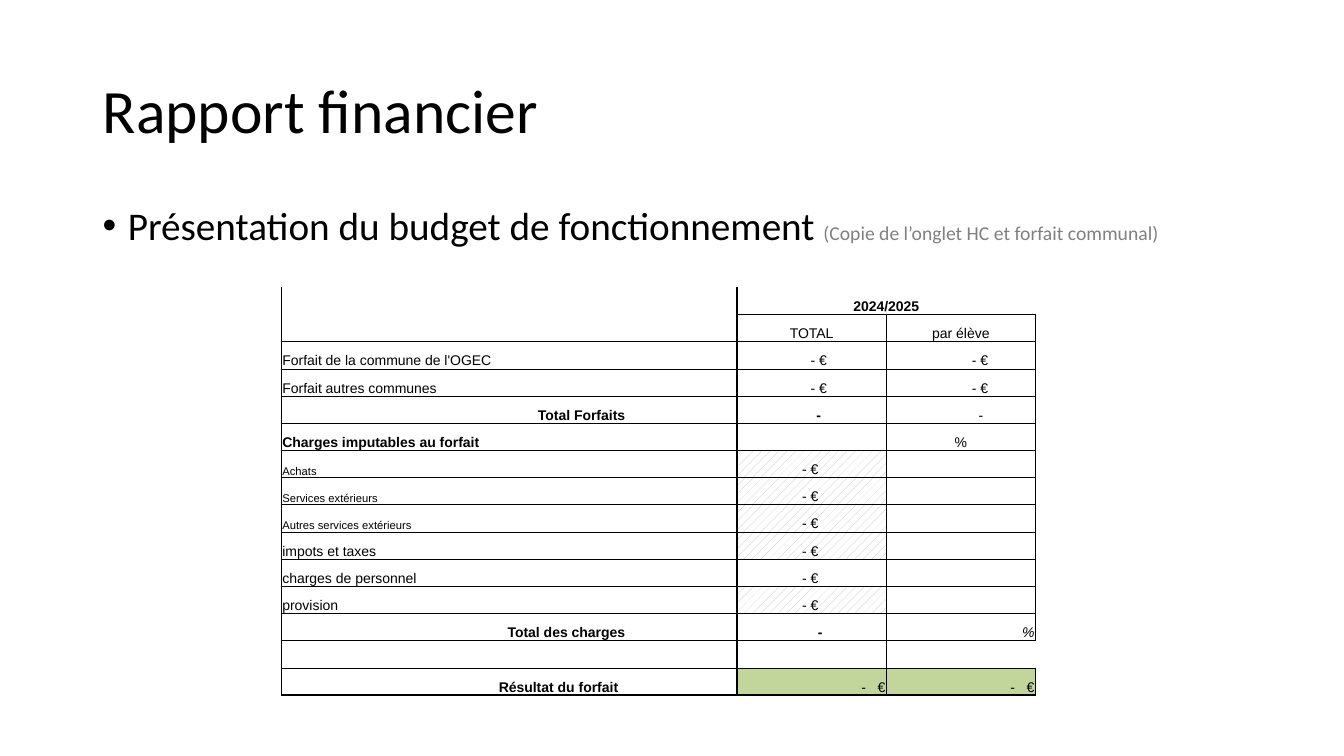
from dataclasses import dataclass

from lxml import etree
from pptx import Presentation
from pptx.dml.color import RGBColor
from pptx.enum import dml, text
from pptx.oxml import ns
from pptx.util import Pt

PX = 9144
BLACK = RGBColor(0x00, 0x00, 0x00)
WHITE = RGBColor(0xFF, 0xFF, 0xFF)
GREY = RGBColor(0x80, 0x80, 0x80)
HATCH = RGBColor(0xBF, 0xBF, 0xBF)
GREEN = RGBColor(0xC2, 0xD6, 0x9B)
LEFT, MID, RIGHT = text.PP_ALIGN.LEFT, text.PP_ALIGN.CENTER, text.PP_ALIGN.RIGHT


@dataclass(frozen=True)
class Item:
    words: str = ""
    side: text.PP_ALIGN = MID
    size: int = 10
    bold: bool = False
    slant: bool = False
    lead: int = 1
    trail: int = 1
    fill: RGBColor | None = None


@dataclass(frozen=True)
class Line:
    label: Item
    total: Item
    pupil: Item
    base: float = 0.5


def name(words: str, size: int = 10, bold: bool = False) -> Item:
    return Item(words, LEFT, size, bold)


def sum_up(words: str, trail: int = 1) -> Item:
    return Item(words, RIGHT, bold=True, trail=trail)


NONE = Item()
EURO = Item("- €", trail=4)
SHADE = Item("- €", trail=4, fill=HATCH)
GRANT = Item("- €", lead=15, fill=WHITE)
SHARE = Item("- €", lead=39)
RESULT = Item("-   €", RIGHT, fill=GREEN)
LINES = [
    Line(NONE, Item("2024/2025", bold=True), NONE, 1),
    Line(NONE, Item("TOTAL"), Item("par élève"), 1),
    Line(name("Forfait de la commune de l'OGEC"), GRANT, SHARE),
    Line(name("Forfait autres communes"), GRANT, SHARE),
    Line(sum_up("Total Forfaits"), Item("-", bold=True, lead=15), Item("-", lead=41), 1),
    Line(name("Charges imputables au forfait", bold=True), NONE, Item("%"), 1),
    Line(name("Achats", 8), SHADE, NONE),
    Line(name("Services extérieurs", 8), SHADE, NONE),
    Line(name("Autres services extérieurs", 8), SHADE, NONE),
    Line(name("impots et taxes"), SHADE, NONE),
    Line(name("charges de personnel"), EURO, NONE),
    Line(name("provision"), SHADE, NONE, 1),
    Line(sum_up("Total des charges"), Item("-", bold=True, lead=18),
         Item("%", RIGHT, slant=True, fill=WHITE), 1),
    Line(NONE, NONE, NONE),
    Line(sum_up("Résultat du forfait", 8), RESULT, RESULT, 1),
]
GAP = len(LINES) - 2
COLS = [342, 110, 148, 148]
HIGH = 27


def write(para, words: str, *, size: int, face: str, color: RGBColor = BLACK,
          bold: bool = False, slant: bool = False) -> None:
    run = para.add_run()
    run.text = words
    font = run.font
    font.size, font.name, font.bold, font.italic = Pt(size), face, bold, slant
    font.color.rgb = color


def add_box(slide, x: int, y: int, wide: int, high: int, mid: bool = False):
    frame = slide.shapes.add_textbox(x * PX, y * PX, wide * PX, high * PX).text_frame
    frame.word_wrap = True
    frame.vertical_anchor = text.MSO_ANCHOR.MIDDLE if mid else text.MSO_ANCHOR.TOP
    para = frame.paragraphs[0]
    para.line_spacing = 0.9
    return para


def add_dot(para) -> None:
    props = para._p.get_or_add_pPr()
    props.set("marL", str(25 * PX))
    props.set("indent", str(-25 * PX))
    etree.SubElement(props, ns.qn("a:buFont"), typeface="Arial")
    etree.SubElement(props, ns.qn("a:buChar"), char="•")


def wall(row: int, col: int) -> float:
    bare = col == 1 or (row == 0 and col > 2) or (row == GAP and col == 4)
    return 0 if bare else 1


def floor(row: int, col: int) -> float:
    bare = row < 0 or (row == 0 and col < 2)
    return 0 if bare else LINES[row].base


def add_edge(cell, tag: str, width: float) -> None:
    edge = etree.SubElement(cell._tc.get_or_add_tcPr(), ns.qn(tag), w=str(int(Pt(width))))
    if width:
        fill = etree.SubElement(edge, ns.qn("a:solidFill"))
        etree.SubElement(fill, ns.qn("a:srgbClr"), val=str(BLACK))
    else:
        etree.SubElement(edge, ns.qn("a:noFill"))


def paint(cell, color: RGBColor | None) -> None:
    if color is None:
        cell.fill.background()
    elif color == HATCH:
        cell.fill.patterned()
        cell.fill.pattern = dml.MSO_PATTERN.PERCENT_20
        cell.fill.fore_color.rgb = HATCH
        cell.fill.back_color.rgb = WHITE
    else:
        cell.fill.solid()
        cell.fill.fore_color.rgb = color


def fill_cell(cell, item: Item, row: int, col: int) -> None:
    add_edge(cell, "a:lnL", wall(row, col))
    add_edge(cell, "a:lnR", wall(row, col + 1))
    add_edge(cell, "a:lnT", floor(row - 1, col))
    add_edge(cell, "a:lnB", floor(row, col))
    paint(cell, item.fill)
    cell.margin_left, cell.margin_right = item.lead * PX, item.trail * PX
    cell.margin_top, cell.margin_bottom = PX, 0
    cell.vertical_anchor = text.MSO_ANCHOR.BOTTOM
    para = cell.text_frame.paragraphs[0]
    para.alignment = item.side
    if item.words:
        write(para, item.words, size=item.size, face="Arial", bold=item.bold, slant=item.slant)
    else:
        etree.SubElement(para._p, ns.qn("a:endParaRPr"), sz="1000")


def add_grid(slide) -> None:
    frame = slide.shapes.add_table(len(LINES), len(COLS), 279 * PX, 285 * PX,
                                   sum(COLS) * PX, HIGH * len(LINES) * PX)
    grid = frame.table
    grid.first_row = grid.horz_banding = False
    for col, wide in enumerate(COLS):
        grid.columns[col].width = wide * PX
    for row, line in enumerate(LINES):
        grid.rows[row].height = HIGH * PX
        for col, item in enumerate([line.label, NONE, line.total, line.pupil]):
            fill_cell(grid.cell(row, col), item, row, col)
    grid.cell(0, 2).merge(grid.cell(0, 3))


def main() -> None:
    deck = Presentation()
    deck.slide_width, deck.slide_height = 1333 * PX, 750 * PX
    slide = deck.slides.add_slide(deck.slide_layouts[6])
    title = add_box(slide, 92, 40, 1150, 145, mid=True)
    write(title, "Rapport financier", size=44, face="Calibri")
    body = add_box(slide, 92, 200, 1150, 476)
    body.space_before = Pt(10)
    add_dot(body)
    write(body, "Présentation du budget de fonctionnement ", size=28, face="Calibri")
    write(body, "(Copie de l’onglet HC et forfait communal)", size=14, face="Calibri", color=GREY)
    add_grid(slide)
    deck.save("out.pptx")


if __name__ == "__main__":
    main()
